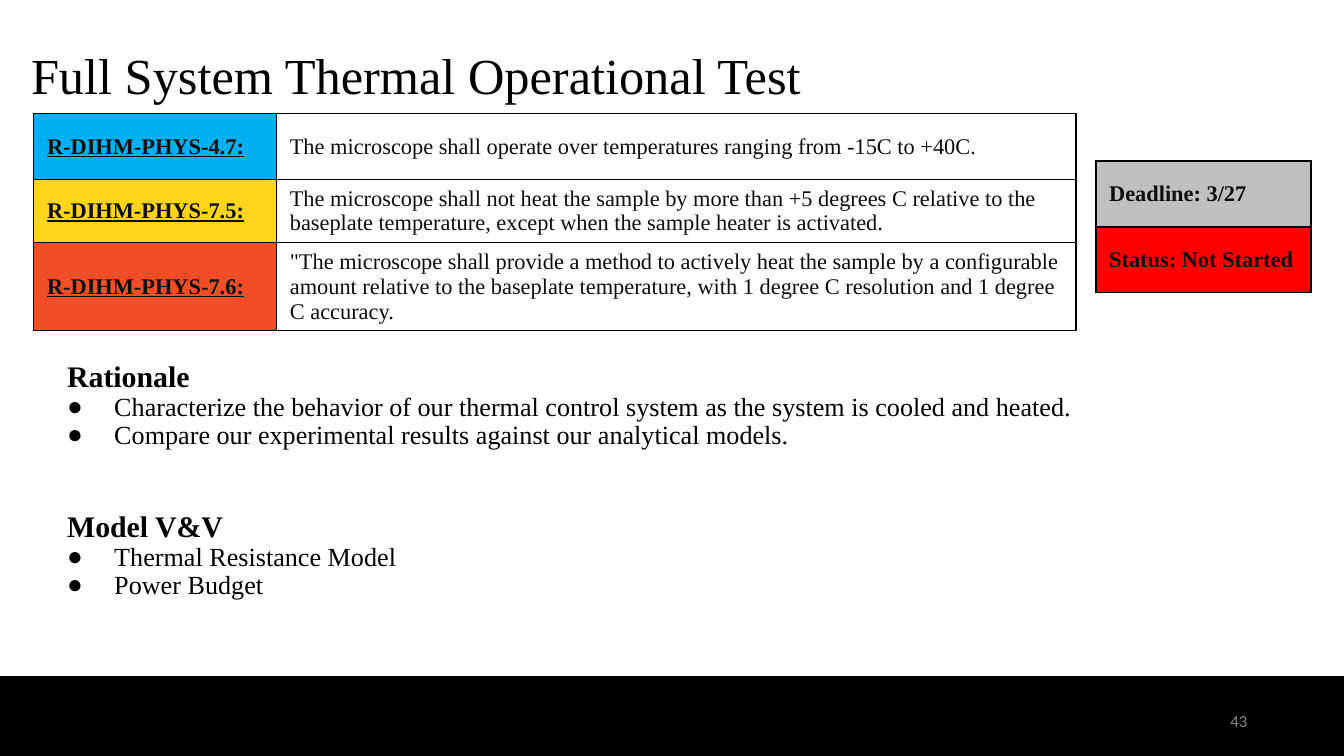
from dataclasses import dataclass

from lxml import etree
from pptx import Presentation
from pptx.dml.color import RGBColor
from pptx.enum import shapes, text
from pptx.oxml import ns
from pptx.util import Pt


@dataclass(frozen=True)
class Theme:
    serif: str = "Times New Roman"
    sans: str = "Calibri"
    black: str = "000000"
    ink: str = "0D0D0D"
    muted: str = "888888"
    blue: str = "00B0F0"
    yellow: str = "FED41D"
    orange: str = "F14E28"
    grey: str = "BFBFBF"
    red: str = "FF0000"
    title_size: float = 27
    heading_size: float = 16
    bullet_size: float = 14
    table_size: float = 12
    number_size: float = 9
    border: float = 0.96
    line_spacing: float = 0.9


@dataclass(frozen=True)
class Box:
    left: float
    top: float
    width: float
    height: float


@dataclass(frozen=True)
class Entry:
    text: str
    fill: str | None = None
    bold: bool = False
    underline: bool = False


@dataclass(frozen=True)
class Section:
    heading: str
    bullets: tuple[str, ...]
    space_before: float = 0


THEME = Theme()
SLIDE_WIDTH, SLIDE_HEIGHT = 720, 405
INSET = 7.2
BULLET_LEFT, BULLET_HANGING, HEADING_LEFT = 36, 25.2, 10.8


def requirement(name: str, fill: str, wording: str) -> list[Entry]:
    return [Entry(name, fill, bold=True, underline=True), Entry(wording)]


REQUIREMENTS = [
    requirement("R-DIHM-PHYS-4.7:", THEME.blue,
                "The microscope shall operate over temperatures ranging from -15C to +40C."),
    requirement("R-DIHM-PHYS-7.5:", THEME.yellow,
                "The microscope shall not heat the sample by more than +5 degrees C relative to the "
                "baseplate temperature, except when the sample heater is activated."),
    requirement("R-DIHM-PHYS-7.6:", THEME.orange,
                '"The microscope shall provide a method to actively heat the sample by a configurable '
                "amount relative to the baseplate temperature, with 1 degree C resolution and 1 degree "
                "C accuracy."),
]
PROGRESS = [
    [Entry("Deadline: 3/27", THEME.grey, bold=True)],
    [Entry("Status: Not Started", THEME.red, bold=True)],
]
SECTIONS = [
    Section("Rationale", (
        "Characterize the behavior of our thermal control system as the system is cooled and heated.",
        "Compare our experimental results against our analytical models.",
    )),
    Section("Model V&V", ("Thermal Resistance Model", "Power Budget"), space_before=33),
]


def style(paragraph, size: float, color: str, name: str = THEME.serif,
          bold: bool = False, underline: bool = False) -> None:
    for run in paragraph.runs:
        run.font.name = name
        run.font.size = Pt(size)
        run.font.bold = bold
        run.font.underline = underline
        run.font.color.rgb = RGBColor.from_string(color)


def place(shape, box: Box) -> None:
    shape.left, shape.top = Pt(box.left), Pt(box.top)
    shape.width, shape.height = Pt(box.width), Pt(box.height)


def prepare_frame(frame, anchor) -> None:
    frame.word_wrap = True
    frame.auto_size = text.MSO_AUTO_SIZE.NONE
    frame.vertical_anchor = anchor
    frame.margin_left = frame.margin_right = Pt(INSET)
    frame.margin_top = frame.margin_bottom = Pt(INSET)


def set_border(cell) -> None:
    properties = cell._tc.get_or_add_tcPr()
    for side in ("lnL", "lnR", "lnT", "lnB"):
        line = etree.SubElement(properties, ns.qn(f"a:{side}"), w=str(Pt(THEME.border)))
        fill = etree.SubElement(line, ns.qn("a:solidFill"))
        etree.SubElement(fill, ns.qn("a:srgbClr"), val=THEME.black)


def add_grid(slide, left: float, top: float, widths: list[float],
             heights: list[float], rows: list[list[Entry]]) -> None:
    table = slide.shapes.add_table(len(heights), len(widths), Pt(left), Pt(top),
                                   Pt(sum(widths)), Pt(sum(heights))).table
    table.first_row = table.horz_banding = False
    for column, width in zip(table.columns, widths):
        column.width = Pt(width)
    for row, height, entries in zip(table.rows, heights, rows):
        row.height = Pt(height)
        for cell, entry in zip(row.cells, entries):
            set_border(cell)
            if entry.fill:
                cell.fill.solid()
                cell.fill.fore_color.rgb = RGBColor.from_string(entry.fill)
            else:
                cell.fill.background()
            cell.vertical_anchor = text.MSO_ANCHOR.MIDDLE
            cell.margin_left = cell.margin_right = Pt(INSET)
            cell.margin_top = cell.margin_bottom = Pt(INSET / 2)
            cell.text_frame.text = entry.text
            style(cell.text_frame.paragraphs[0], THEME.table_size, THEME.ink,
                  bold=entry.bold, underline=entry.underline)


def set_bullet(paragraph, bulleted: bool) -> None:
    """Set the indents, and either a round black bullet or none."""
    properties = paragraph._p.get_or_add_pPr()
    properties.set("marL", str(Pt(BULLET_LEFT if bulleted else HEADING_LEFT)))
    properties.set("indent", str(Pt(-BULLET_HANGING if bulleted else 0)))
    if bulleted:
        color = etree.SubElement(properties, ns.qn("a:buClr"))
        etree.SubElement(color, ns.qn("a:srgbClr"), val=THEME.black)
        etree.SubElement(properties, ns.qn("a:buFont"), typeface=THEME.serif)
        etree.SubElement(properties, ns.qn("a:buChar"), char="●")
    else:
        etree.SubElement(properties, ns.qn("a:buNone"))


def fill_title(shape) -> None:
    place(shape, Box(9.4, 20.2, 671, 45.4))
    prepare_frame(shape.text_frame, text.MSO_ANCHOR.TOP)
    shape.text_frame.text = "Full System Thermal Operational Test"
    paragraph = shape.text_frame.paragraphs[0]
    paragraph.alignment = text.PP_ALIGN.LEFT
    paragraph.line_spacing = THEME.line_spacing
    style(paragraph, THEME.title_size, THEME.black)


def fill_body(shape) -> None:
    place(shape, Box(18, 186.5, 579.6, 157.7))
    frame = shape.text_frame
    prepare_frame(frame, text.MSO_ANCHOR.TOP)
    lines = [(section, line) for section in SECTIONS for line in (section.heading, *section.bullets)]
    frame.text = "\n".join(line for _, line in lines)
    for paragraph, (section, line) in zip(frame.paragraphs, lines):
        is_heading = line == section.heading
        set_bullet(paragraph, not is_heading)
        paragraph.line_spacing = THEME.line_spacing
        paragraph.space_before = Pt(section.space_before if is_heading else 0)
        style(paragraph, THEME.heading_size if is_heading else THEME.bullet_size,
              THEME.black, bold=is_heading)


def add_footer(slide) -> None:
    top = 362.6
    bar = slide.shapes.add_shape(shapes.MSO_SHAPE.RECTANGLE, 0, Pt(top),
                                 Pt(SLIDE_WIDTH), Pt(SLIDE_HEIGHT - top))
    bar.shadow.inherit = False
    bar.fill.solid()
    bar.fill.fore_color.rgb = bar.line.color.rgb = RGBColor.from_string(THEME.black)
    bar.line.width = Pt(1)
    number = slide.shapes.add_textbox(Pt(632.2), Pt(370.4), Pt(43.2), Pt(31))
    prepare_frame(number.text_frame, text.MSO_ANCHOR.MIDDLE)
    number.text_frame.text = "43"
    paragraph = number.text_frame.paragraphs[0]
    paragraph.alignment = text.PP_ALIGN.RIGHT
    style(paragraph, THEME.number_size, THEME.muted, THEME.sans)


def main() -> None:
    presentation = Presentation()
    presentation.slide_width, presentation.slide_height = Pt(SLIDE_WIDTH), Pt(SLIDE_HEIGHT)
    slide = presentation.slides.add_slide(presentation.slide_layouts[1])
    fill_title(slide.shapes.title)
    fill_body(slide.placeholders[1])
    add_footer(slide)
    add_grid(slide, 18, 60.9, [130.1, 428.3], [35.2, 33.6, 46.8], REQUIREMENTS)
    add_grid(slide, 587, 86.3, [115.4], [35.2, 35.2], PROGRESS)
    presentation.save("out.pptx")


if __name__ == "__main__":
    main()
